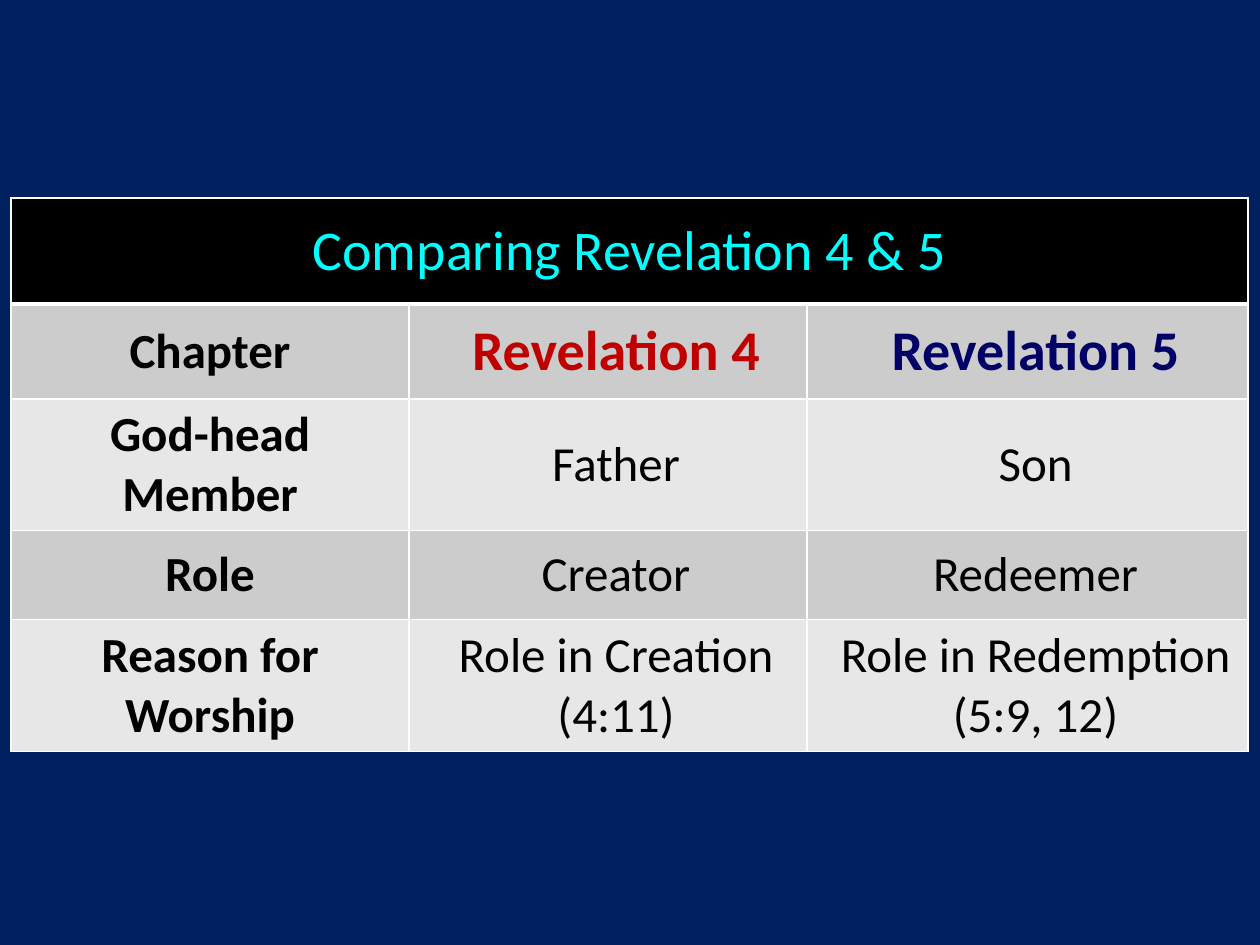
from dataclasses import dataclass

from lxml import etree
from pptx import Presentation
from pptx.dml.color import RGBColor
from pptx.enum.text import MSO_ANCHOR, PP_ALIGN
from pptx.oxml.ns import qn
from pptx.util import Emu, Pt

MIDDLE = MSO_ANCHOR.MIDDLE
CENTER = PP_ALIGN.CENTER
EMU_PER_PX = 914400 / 126
FONT = "Calibri"
COLORS = {
    "navy": "002060",
    "black": "000000",
    "white": "FFFFFF",
    "cyan": "00FFFF",
    "red": "C00000",
    "indigo": "000066",
    "dark_band": "CCCCCC",
    "light_band": "E7E7E7",
}
COLUMN_WIDTHS = [398, 398, 441]
ROW_HEIGHTS = [106, 95, 95, 89, 89]
TABLE_LEFT, TABLE_TOP, TABLE_HEIGHT = 11, 198, 551


@dataclass
class Entry:
    text: str
    size: int = 28
    color: str = "black"
    bold: bool = False


TITLE = Entry("Comparing Revelation 4 & 5", 32, "cyan")
COMPARISON = [
    [
        Entry("Chapter", bold=True),
        Entry("Revelation 4", 32, "red", True),
        Entry("Revelation 5", 32, "indigo", True),
    ],
    [Entry("God-head Member", bold=True), Entry("Father"), Entry("Son")],
    [Entry("Role", bold=True), Entry("Creator"), Entry("Redeemer")],
    [
        Entry("Reason for Worship", bold=True),
        Entry("Role in Creation (4:11)"),
        Entry("Role in Redemption (5:9, 12)"),
    ],
]


def px(length: int) -> Emu:
    return Emu(round(length * EMU_PER_PX))


def rgb(name: str) -> RGBColor:
    return RGBColor.from_string(COLORS[name])


def style_cell(cell, fill: str, top: int = 1, bottom: int = 1) -> None:
    properties = cell._tc.get_or_add_tcPr()
    for side, width in (("L", 1), ("R", 1), ("T", top), ("B", bottom)):
        line = etree.SubElement(properties, qn(f"a:ln{side}"), w=str(Pt(width)))
        paint = etree.SubElement(line, qn("a:solidFill"))
        etree.SubElement(paint, qn("a:srgbClr"), val=COLORS["white"])
    cell.fill.solid()
    cell.fill.fore_color.rgb = rgb(fill)
    cell.vertical_anchor = MIDDLE


def write_entry(cell, entry: Entry, indent: int = 0) -> None:
    cell.text_frame.text = entry.text
    para = cell.text_frame.paragraphs[0]
    para.alignment = CENTER
    if indent:
        properties = para._p.get_or_add_pPr()
        properties.set("marL", str(px(indent)))
        properties.set("indent", "0")
    font = para.runs[0].font
    font.name = FONT
    font.size = Pt(entry.size)
    font.bold = entry.bold
    font.color.rgb = rgb(entry.color)


def draw_comparison(page) -> None:
    frame = page.shapes.add_table(
        len(ROW_HEIGHTS), len(COLUMN_WIDTHS), px(TABLE_LEFT), px(TABLE_TOP),
        px(sum(COLUMN_WIDTHS)), px(TABLE_HEIGHT),
    )
    table = frame.table
    for column, width in zip(table.columns, COLUMN_WIDTHS):
        column.width = px(width)
    for row, height in zip(table.rows, ROW_HEIGHTS):
        row.height = px(height)
    frame.height = px(TABLE_HEIGHT)

    for cell in table.rows[0].cells:
        style_cell(cell, "black", bottom=3)
    table.cell(0, 0).merge(table.cell(0, len(COLUMN_WIDTHS) - 1))
    write_entry(table.cell(0, 0), TITLE)

    for row, entries in enumerate(COMPARISON, start=1):
        fill = "dark_band" if row % 2 else "light_band"
        for column, entry in enumerate(entries):
            cell = table.cell(row, column)
            style_cell(cell, fill, top=3 if row == 1 else 1)
            cell.margin_left = cell.margin_right = px(11)
            cell.margin_top = cell.margin_bottom = px(6)
            write_entry(cell, entry, indent=16 if column else 0)


def main() -> None:
    deck = Presentation()
    deck.slide_width, deck.slide_height = px(1260), px(945)
    page = deck.slides.add_slide(deck.slide_layouts[6])
    page.background.fill.solid()
    page.background.fill.fore_color.rgb = rgb("navy")
    draw_comparison(page)
    deck.save("out.pptx")


if __name__ == "__main__":
    main()
